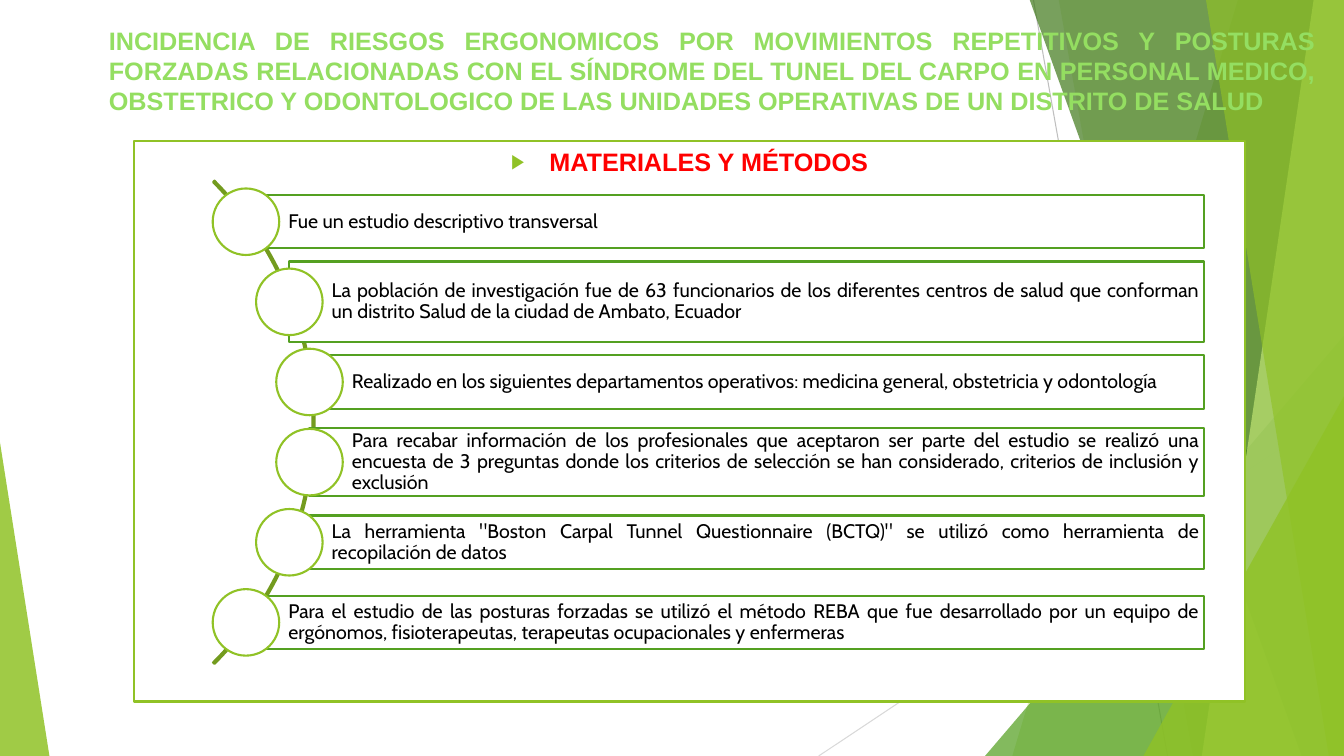
from lxml.etree import SubElement
from pptx import Presentation
from pptx.dml.color import RGBColor
from pptx.enum.shapes import MSO_CONNECTOR, MSO_SHAPE
from pptx.enum.text import MSO_ANCHOR as Anchor, MSO_AUTO_SIZE, PP_ALIGN as Align
from pptx.oxml.ns import qn
from pptx.util import Inches, Pt

LIME, GREEN, WHITE = "90C226", "54A021", "FFFFFF"
TITLE = (
    "INCIDENCIA DE RIESGOS ERGONOMICOS POR MOVIMIENTOS REPETITIVOS Y POSTURAS "
    "FORZADAS RELACIONADAS CON EL SÍNDROME DEL TUNEL DEL CARPO EN PERSONAL MEDICO, "
    "OBSTETRICO Y ODONTOLOGICO DE LAS UNIDADES OPERATIVAS DE UN DISTRITO DE SALUD"
)

# Each step: circle left, bar height, text
STEPS = [
    (2.11, 0.53, "Fue un estudio descriptivo transversal"),
    (2.54, 0.8, "La población de investigación fue de 63 funcionarios de los diferentes "
     "centros de salud que conforman un distrito Salud de la ciudad de Ambato, Ecuador"),
    (2.74, 0.53, "Realizado en los siguientes departamentos operativos: medicina general, "
     "obstetricia y odontología "),
    (2.74, 0.67, "Para recabar información de los profesionales que aceptaron ser parte del "
     "estudio se realizó una encuesta de 3 preguntas donde los criterios de selección se "
     "han considerado, criterios de inclusión y exclusión "),
    (2.54, 0.53, "La herramienta \"Boston Carpal Tunnel Questionnaire (BCTQ)\" se utilizó "
     "como herramienta de recopilación de datos"),
    (2.11, 0.53, "Para el estudio de las posturas forzadas se utilizó el método REBA que fue "
     "desarrollado por un equipo de ergónomos, fisioterapeutas, terapeutas ocupacionales "
     "y enfermeras"),
]
FIRST_CENTER, STEP_PITCH = 2.2, 0.795
CIRCLE, BAR_RIGHT = 0.66, 11.94


def color(hex_string):
    return RGBColor.from_string(hex_string)


def write(shape, text, font="Arial", size=18, ink="000000", bold=False, align=Align.JUSTIFY,
          anchor=Anchor.TOP, insets=(0.1, 0.05, 0.1, 0.05), line=1.0, before=0, after=0):
    frame = shape.text_frame
    frame.auto_size = MSO_AUTO_SIZE.NONE
    frame.word_wrap = True
    frame.vertical_anchor = anchor
    (frame.margin_left, frame.margin_top,
     frame.margin_right, frame.margin_bottom) = map(Inches, insets)
    paragraph = frame.paragraphs[0]
    paragraph.alignment = align
    paragraph.line_spacing = line
    paragraph.space_before, paragraph.space_after = Pt(before), Pt(after)
    run = paragraph.add_run()
    run.text = text
    run.font.name, run.font.size, run.font.bold = font, Pt(size), bold
    run.font.color.rgb = color(ink)
    return paragraph


class MethodsSlide:
    def __init__(self, presentation):
        self.slide = presentation.slides.add_slide(presentation.slide_layouts[1])
        self.shapes = self.slide.shapes

    def paint(self, shape, fill=None, line=None, opacity=100):
        if fill:
            shape.fill.solid()
            shape.fill.fore_color.rgb = color(fill)
            if opacity < 100:
                solid = shape.fill.fore_color._xFill
                SubElement(solid[0], qn("a:alpha"), val=str(opacity * 1000))
        else:
            shape.fill.background()
        if line:
            shape.line.color.rgb = color(line)
            shape.line.width = Pt(1.5)
        else:
            shape.line.fill.background()

    def preset(self, kind, box, adjustments=(), **style):
        shape = self.shapes.add_shape(kind, *map(Inches, box))
        shape.shadow.inherit = False
        for index, value in enumerate(adjustments):
            shape.adjustments[index] = value
        self.paint(shape, **style)
        return shape

    def polygon(self, points, **style):
        corners = [(Inches(x), Inches(y)) for x, y in points]
        builder = self.shapes.build_freeform(*corners[0])
        builder.add_line_segments(corners[1:], close=True)
        shape = builder.convert_to_shape()
        shape.shadow.inherit = False
        self.paint(shape, **style)

    def hairline(self, start, end, ink):
        connector = self.shapes.add_connector(
            MSO_CONNECTOR.STRAIGHT, *map(Inches, start + end))
        connector.line.color.rgb = color(ink)
        connector.line.width = Pt(0.75)
        SubElement(connector.element.spPr, qn("a:effectLst"))

    def placeholder(self, index, box):
        shape = self.slide.placeholders[index]
        shape.left, shape.top, shape.width, shape.height = map(Inches, box)
        self.shapes.element.append(shape.element)  # bring to front
        return shape

    def bullet(self, paragraph, character, ink, percent, indent):
        properties = paragraph._p.get_or_add_pPr()
        properties.set("marL", str(Inches(indent)))
        properties.set("indent", str(-Inches(indent)))
        SubElement(SubElement(properties, qn("a:buClr")), qn("a:srgbClr"), val=ink)
        SubElement(properties, qn("a:buSzPct"), val=str(percent * 1000))
        SubElement(properties, qn("a:buFont"), typeface="Arial")
        SubElement(properties, qn("a:buChar"), char=character)

    def step(self, center, circle_left, height, text, align):
        left = circle_left + CIRCLE / 2
        bar = self.preset(MSO_SHAPE.RECTANGLE,
                          (left, center - height / 2, BAR_RIGHT - left, height),
                          fill=WHITE, line=GREEN)
        write(bar, text, font="Cabin", size=14, align=align, anchor=Anchor.MIDDLE,
              insets=(0.42, 0.04, 0.04, 0.04), line=0.9, after=5)
        self.preset(MSO_SHAPE.OVAL, (circle_left, center - CIRCLE / 2, CIRCLE, CIRCLE),
                    fill=WHITE, line=LIME)


def main():
    presentation = Presentation()
    presentation.slide_width, presentation.slide_height = Inches(13.33), Inches(7.5)
    page = MethodsSlide(presentation)

    # Background facets
    def band(top_left, bottom_left, fill, opacity):
        page.polygon([(top_left, -0.01), (13.33, -0.01), (13.33, 7.5), (bottom_left, 7.5)],
                     fill=fill, opacity=opacity)

    def wedge(box, apex, fill, opacity):
        page.preset(MSO_SHAPE.ISOSCELES_TRIANGLE, box, [apex], fill=fill, opacity=opacity)

    page.hairline((10.25, 0), (11.58, 7.5), "BFBFBF")
    page.hairline((13.33, 4.03), (8.12, 7.5), "D9D9D9")
    band(12.28, 10.04, LIME, 30)
    band(10.5, 11.83, LIME, 20)
    wedge((9.77, 3.33, 3.56, 4.17), 1, GREEN, 72)
    band(10.21, 12.91, "3F7819", 70)
    band(13.03, 11.92, "C0E474", 70)
    band(11.96, 13.18, LIME, 65)
    wedge((11.34, 3.93, 1.99, 3.57), 1, LIME, 80)
    wedge((0, 4.39, 0.49, 3.11), 0, LIME, 85)

    # Title and framed heading
    title = page.placeholder(0, (0.98, 0.2, 12.17, 1.4))
    write(title, TITLE, ink="94DE61", bold=True)
    body = page.placeholder(1, (1.33, 1.4, 11.02, 5.56))
    page.paint(body, fill=WHITE, line=LIME)
    heading = write(body, "MATERIALES Y MÉTODOS", ink="FF0000", bold=True,
                    align=Align.CENTER, before=10)
    page.bullet(heading, "▶", LIME, percent=80, indent=0.38)

    # Curved list of steps
    page.preset(MSO_SHAPE.BLOCK_ARC, (-3.66, 0.8, 6.78, 6.78), (189, 27, 0.003),
                line="739B1E")
    for index, (circle_left, height, text) in enumerate(STEPS):
        align = Align.JUSTIFY if index else Align.LEFT
        page.step(FIRST_CENTER + index * STEP_PITCH, circle_left, height, text, align)

    presentation.save("out.pptx")


if __name__ == "__main__":
    main()
